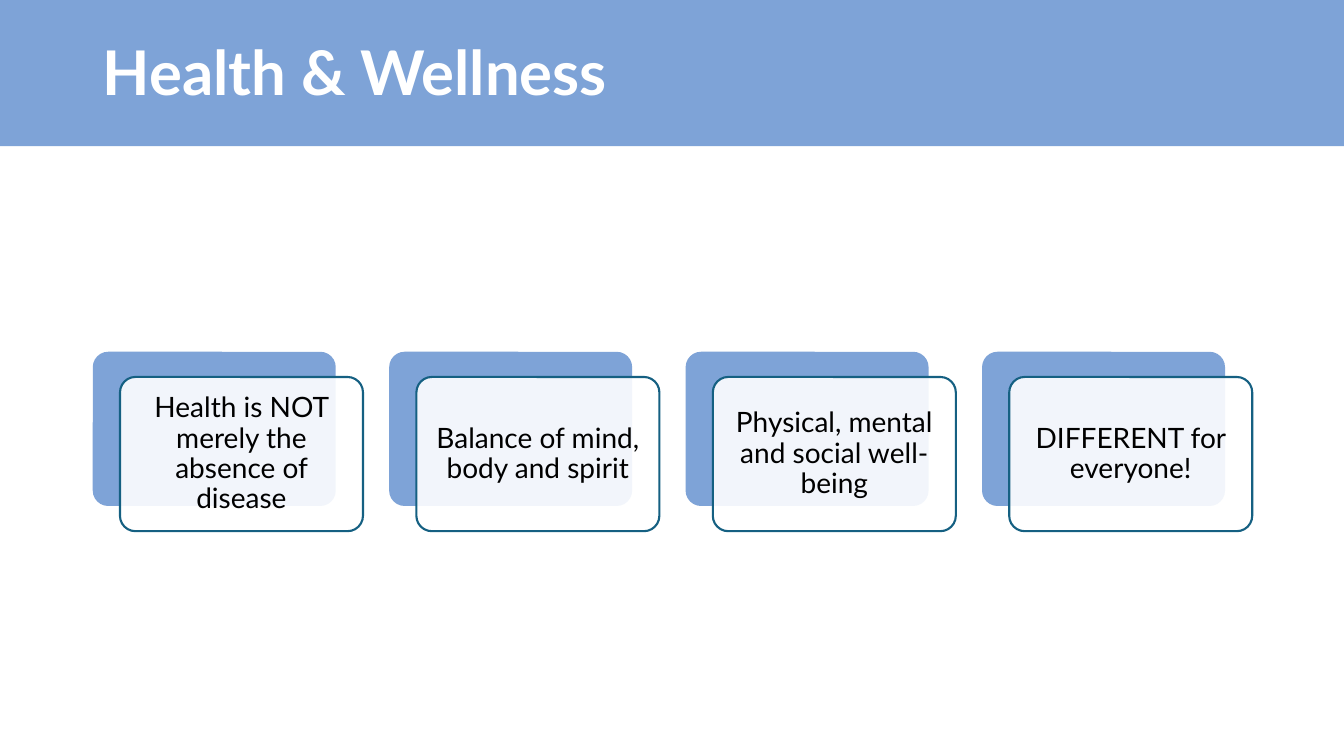
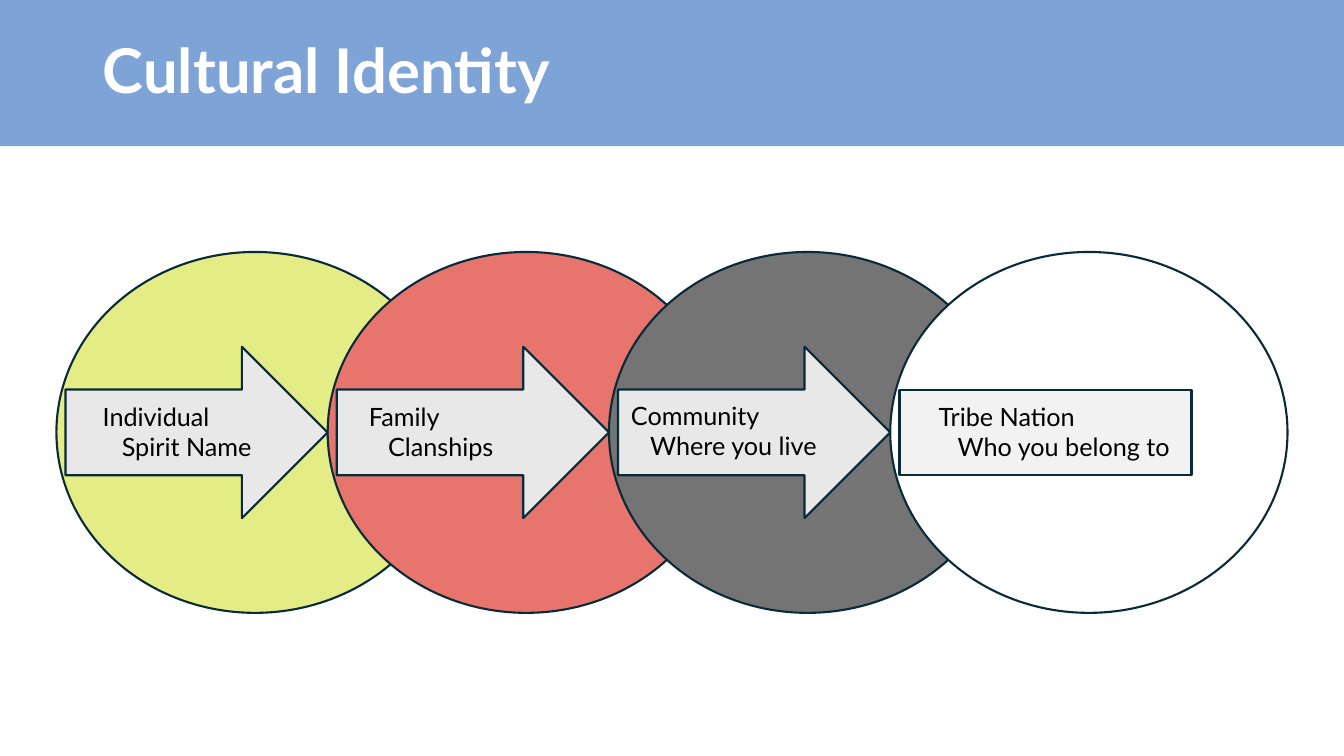
from lxml import etree
from pptx import Presentation
from pptx.dml.color import RGBColor
from pptx.enum.shapes import MSO_SHAPE as SHAPE
from pptx.enum.text import MSO_ANCHOR as ANCHOR, MSO_AUTO_SIZE as AUTO, PP_ALIGN as ALIGN
from pptx.oxml.ns import qn
from pptx.util import Inches, Pt

BLUE = RGBColor(0x7E, 0xA3, 0xD7)
TEAL = RGBColor(0x15, 0x60, 0x82)
NAVY = RGBColor(0x09, 0x2A, 0x39)
YELLOW = RGBColor(0xE4, 0xED, 0x85)
RED = RGBColor(0xE8, 0x75, 0x6D)
GRAY = RGBColor(0x74, 0x74, 0x74)
ARROW_GRAY = RGBColor(0xE8, 0xE8, 0xE8)
BAR_GRAY = RGBColor(0xF2, 0xF2, 0xF2)
WHITE = RGBColor(0xFF, 0xFF, 0xFF)
BLACK = RGBColor(0, 0, 0)

SLIDE_W, SLIDE_H, BAND_H = 13.33, 7.5, 1.45
TITLE_FONT = {"name": "Lato", "size": Pt(44), "bold": True}
CARD_FONT = {"name": "Lato", "size": Pt(20)}
LABEL_FONT = {"name": "Lato", "size": Pt(18)}

CARDS = [
    "Health is NOT merely the absence of disease",
    "Balance of mind, body and spirit",
    "Physical, mental and social well-being",
    "DIFFERENT for everyone!",
]
# circle left, circle colour, label left, label top, heading, detail
CIRCLES = [
    (0.56, YELLOW, 0.92, 3.93, "Individual", "Spirit Name"),
    (3.25, RED, 3.56, 3.93, "Family", "Clanships"),
    (6.04, GRAY, 6.16, 3.92, "Community", "Where you live"),
    (8.83, WHITE, 9.21, 3.93, "Tribe Nation", "Who you belong to"),
]


def style_font(font, formats, color):
    for name, value in formats.items():
        setattr(font, name, value)
    font.color.rgb = color


def add_shape(s, kind, x, y, w, h, fill, line=None):
    sp = s.shapes.add_shape(kind, Inches(x), Inches(y), Inches(w), Inches(h))
    sp.shadow.inherit = False
    sp.fill.solid()
    sp.fill.fore_color.rgb = fill
    if line is None:
        sp.line.fill.background()
    else:
        sp.line.color.rgb = line
        sp.line.width = Pt(1.5)
    return sp


def set_opacity(sp, percent):
    color = sp.fill._xPr.find(qn("a:solidFill"))[0]
    etree.SubElement(color, qn("a:alpha")).set("val", str(percent * 1000))


def add_titled_slide(prs, title, top):
    s = prs.slides.add_slide(prs.slide_layouts[5])
    band = add_shape(s, SHAPE.RECTANGLE, 0, 0, SLIDE_W, BAND_H, BLUE)
    ph = s.shapes.title
    ph._element.addprevious(band._element)
    ph.left, ph.top, ph.width, ph.height = map(Inches, (0.92, top, 11.5, BAND_H))
    tf = ph.text_frame
    tf.text = title
    tf.vertical_anchor = ANCHOR.MIDDLE
    tf.auto_size = AUTO.NONE
    p = tf.paragraphs[0]
    p.alignment = ALIGN.LEFT
    p.line_spacing = 0.9
    style_font(p.font, TITLE_FONT, WHITE)
    return s


def add_card(s, x, text):
    """Translucent outlined card, offset over a solid one."""
    w, h = 2.41, 1.53
    back = add_shape(s, SHAPE.ROUNDED_RECTANGLE, x, 3.49, w, h, BLUE)
    front = add_shape(s, SHAPE.ROUNDED_RECTANGLE, x + 0.27, 3.74, w, h, WHITE, TEAL)
    for sp in (back, front):
        sp.adjustments[0] = 0.1
    set_opacity(front, 90)
    tf = front.text_frame
    tf.word_wrap = True
    tf.vertical_anchor = ANCHOR.MIDDLE
    for side in ("left", "top", "right", "bottom"):
        setattr(tf, f"margin_{side}", Inches(0.08))
    p = tf.paragraphs[0]
    p.text = text
    p.alignment = ALIGN.CENTER
    p.line_spacing = 0.9
    style_font(p.font, CARD_FONT, BLACK)


def add_label(s, x, y, heading, detail):
    """Heading with an indented detail line below it."""
    tf = s.shapes.add_textbox(Inches(x), Inches(y), Inches(2.68), Inches(0.71)).text_frame
    tf.word_wrap = True
    tf.text = f"{heading}\n{detail}"
    for p in tf.paragraphs:
        style_font(p.font, LABEL_FONT, BLACK)
    tf.paragraphs[1]._p.get_or_add_pPr().set("marL", str(Inches(0.19)))


def build_health(prs):
    s = add_titled_slide(prs, "Health & Wellness", 0.02)
    for i, text in enumerate(CARDS):
        add_card(s, 0.92 + 2.94 * i, text)


def build_identity(prs):
    s = add_titled_slide(prs, "Cultural Identity", 0)
    top, w, h = 2.5, 3.94, 3.58
    for x, color, *_ in CIRCLES:
        add_shape(s, SHAPE.OVAL, x, top, w, h, color, NAVY)
    for (x, *_), (next_x, *_) in zip(CIRCLES, CIRCLES[1:]):
        left = x + 0.09
        add_shape(s, SHAPE.RIGHT_ARROW, left, 3.44, next_x - left, 1.7, ARROW_GRAY, NAVY)
    add_shape(s, SHAPE.MATH_MINUS, 8.4, top, w, h, BAR_GRAY, NAVY)
    for _, _, *label in CIRCLES:
        add_label(s, *label)


def main():
    prs = Presentation()
    prs.slide_width, prs.slide_height = Inches(SLIDE_W), Inches(SLIDE_H)
    build_health(prs)
    build_identity(prs)
    prs.save("out.pptx")


if __name__ == "__main__":
    main()
